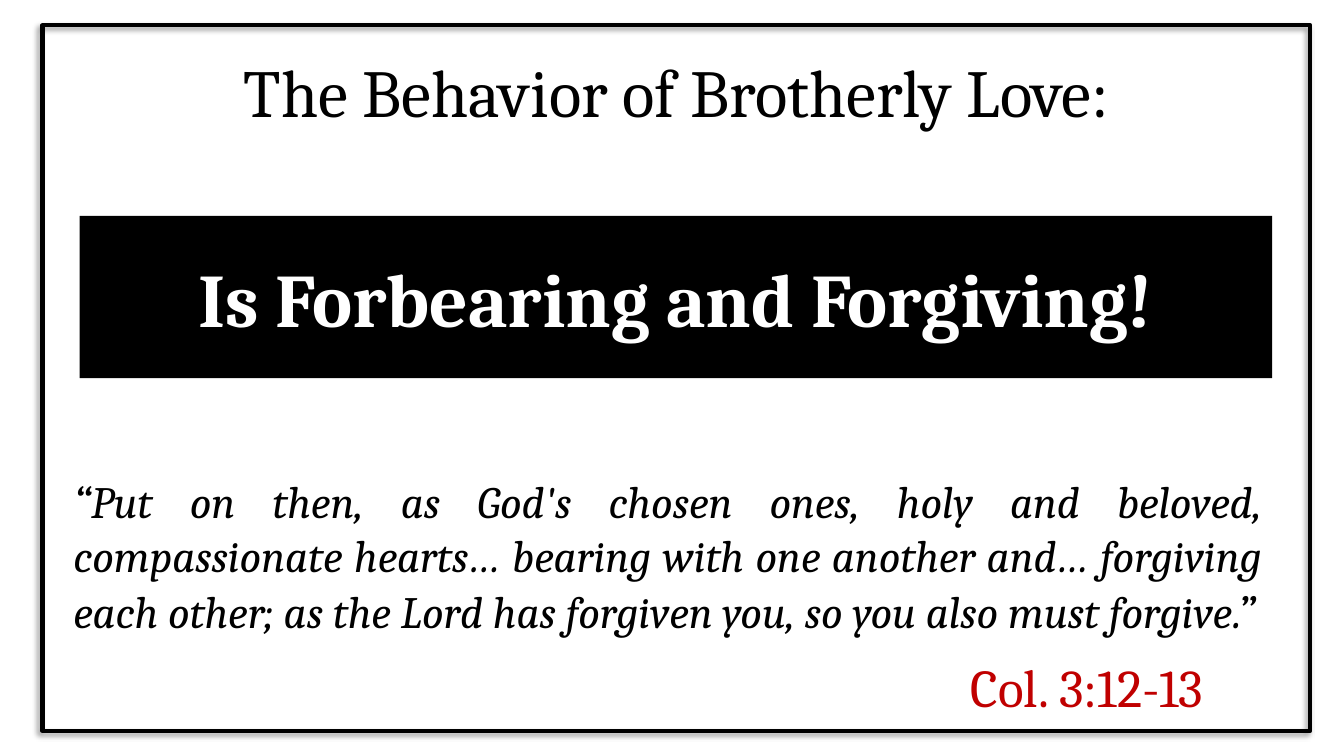
from dataclasses import dataclass

import pptx
import pptx.dml.color
import pptx.enum.shapes
import pptx.enum.text
import pptx.oxml
import pptx.oxml.ns
import pptx.util
from pptx.util import Cm

ALIGN = pptx.enum.text.PP_ALIGN
ANCHOR = pptx.enum.text.MSO_ANCHOR


# Colours and type sizes
@dataclass(frozen=True)
class Theme:
    font: str = "Cambria"
    ink: str = "000000"
    paper: str = "FFFFFF"
    accent: str = "C00000"
    title: int = 48
    banner: int = 54
    verse: int = 32
    quote_mark: int = 34
    citation: int = 38
    frame_line: int = 3


@dataclass(frozen=True)
class Area:
    left: float
    top: float
    width: float
    height: float

    def lengths(self) -> tuple:
        return Cm(self.left), Cm(self.top), Cm(self.width), Cm(self.height)


@dataclass(frozen=True)
class Span:
    text: str
    size: int


THEME = Theme()
TITLE = Area(1.3, 0.99, 31.5, 2.84)
VERSE = Area(1.6, 11.73, 30.48, 5.89)
CITATION = Area(24.21, 16.36, 8.59, 1.88)
FRAME = Area(1.07, 0.64, 31.95, 17.78)
BANNER = Area(2.01, 5.44, 30.05, 4.09)

VERSE_SPANS = [
    Span("“", THEME.quote_mark),
    Span("Put on then, as God's chosen ones, holy and beloved, "
         "compassionate hearts… bearing with one another and… forgiving "
         "each other; as the Lord has forgiven you, so you also must forgive",
         THEME.verse),
    Span(".”", THEME.quote_mark),
]


def rgb(value: str) -> pptx.dml.color.RGBColor:
    return pptx.dml.color.RGBColor.from_string(value)


def write(shape, spans: list[Span], *, color=THEME.ink, align=ALIGN.LEFT,
          anchor=ANCHOR.TOP, bold=False, italic=False, line_spacing=None):
    """Fill a shape with one formatted paragraph and return it."""
    frame = shape.text_frame
    frame.word_wrap = True
    frame.vertical_anchor = anchor
    para = frame.paragraphs[0]
    para.alignment = align
    para.line_spacing = line_spacing
    for part in spans:
        span = para.add_run()
        span.text = part.text
        span.font.size = pptx.util.Pt(part.size)
        span.font.color.rgb = rgb(color)
        span.font.name = THEME.font
        span.font.bold = bold
        span.font.italic = italic
    return para


def add_shadow(effects, *, blur: float, distance: float, angle: int, opacity: int) -> None:
    """Put an outer shadow into an effect list."""
    effects.append(pptx.oxml.parse_xml(
        f'<a:outerShdw {pptx.oxml.ns.nsdecls("a")} '
        f'blurRad="{pptx.util.Pt(blur)}" dist="{pptx.util.Pt(distance)}" '
        f'dir="{angle * 60000}" algn="tl" rotWithShape="0">'
        f'<a:srgbClr val="{THEME.ink}"><a:alpha val="{opacity * 1000}"/></a:srgbClr>'
        '</a:outerShdw>'))


def add_text(page, area: Area, spans: list[Span], **style) -> None:
    write(page.shapes.add_textbox(*area.lengths()), spans, **style)


def add_rectangle(page, area: Area):
    shape = page.shapes.add_shape(
        pptx.enum.shapes.MSO_SHAPE.RECTANGLE, *area.lengths())
    shape.shadow.inherit = False
    return shape


def add_title(page) -> None:
    title = page.shapes.title
    title.left, title.top, title.width, title.height = TITLE.lengths()
    para = write(title, [Span("The Behavior of Brotherly Love:", THEME.title)],
                 align=ALIGN.CENTER, anchor=ANCHOR.MIDDLE, line_spacing=0.9)
    effects = pptx.oxml.parse_xml(f'<a:effectLst {pptx.oxml.ns.nsdecls("a")}/>')
    add_shadow(effects, blur=4, distance=3, angle=45, opacity=40)
    fill = para.runs[0].font.fill
    fill.solid()
    fill.fore_color.rgb = rgb(THEME.ink)
    properties = para.runs[0].font._element
    properties.find(pptx.oxml.ns.qn("a:solidFill")).addnext(effects)


def add_frame(page) -> None:
    frame = add_rectangle(page, FRAME)
    frame.fill.background()
    frame.line.color.rgb = rgb(THEME.ink)
    frame.line.width = pptx.util.Pt(THEME.frame_line)
    effects = frame._element.spPr.find(pptx.oxml.ns.qn("a:effectLst"))
    add_shadow(effects, blur=4, distance=3, angle=135, opacity=40)


def add_banner(page) -> None:
    banner = add_rectangle(page, BANNER)
    banner.fill.solid()
    banner.fill.fore_color.rgb = rgb(THEME.ink)
    banner.line.fill.background()
    write(banner, [Span("Is Forbearing and Forgiving!", THEME.banner)],
          color=THEME.paper, align=ALIGN.CENTER, anchor=ANCHOR.MIDDLE, bold=True)


def main() -> None:
    deck = pptx.Presentation()
    deck.slide_width, deck.slide_height = Cm(33.87), Cm(19.05)
    page = deck.slides.add_slide(deck.slide_layouts.get_by_name("Title Only"))

    # Heading, verse and its reference
    add_title(page)
    add_text(page, VERSE, VERSE_SPANS, align=ALIGN.JUSTIFY, italic=True)
    add_text(page, CITATION, [Span("Col. 3:12-13", THEME.citation)],
             color=THEME.accent)

    # Border and central statement
    add_frame(page)
    add_banner(page)
    deck.save("out.pptx")


if __name__ == "__main__":
    main()
